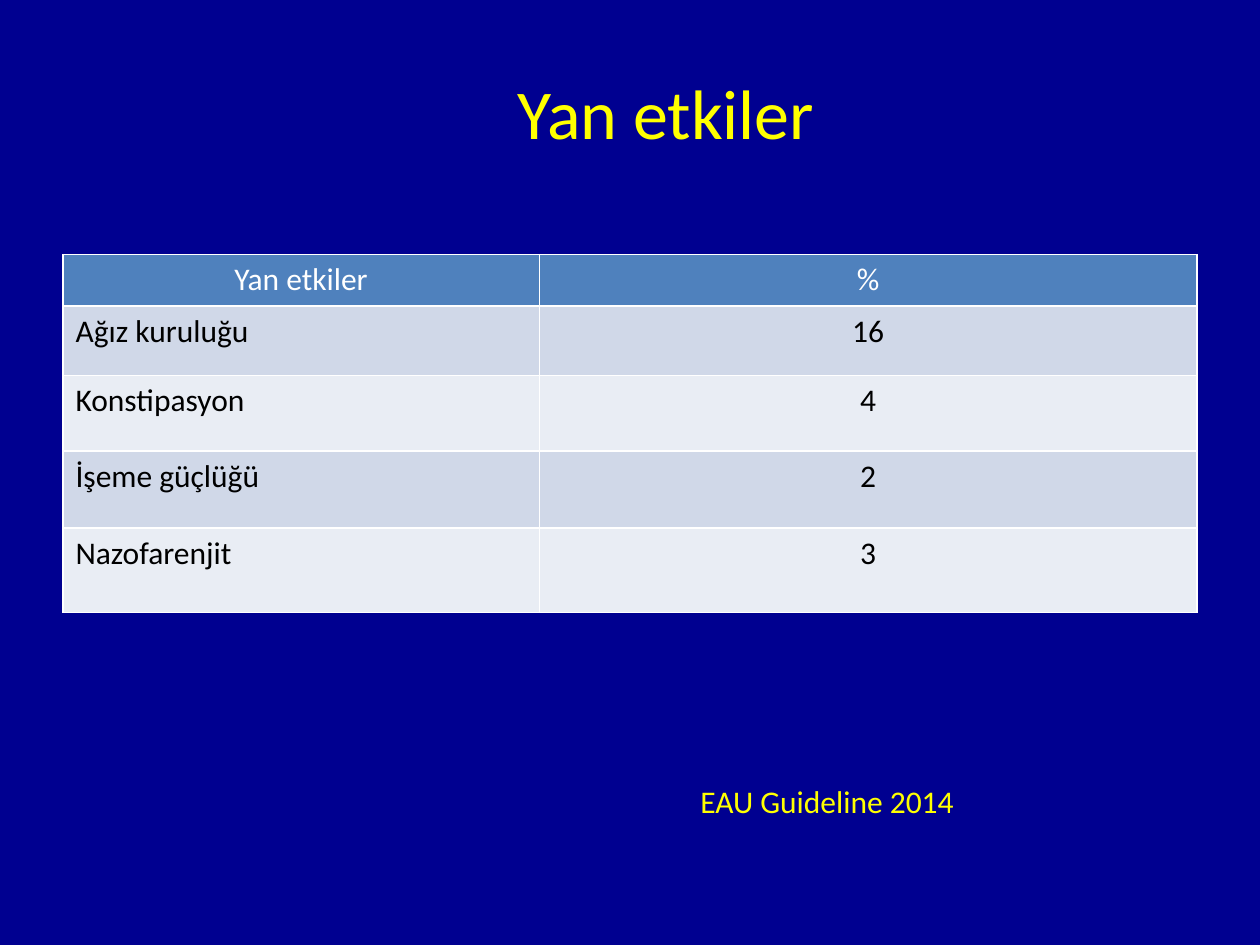
from lxml.etree import SubElement
from pptx import Presentation
from pptx.dml.color import RGBColor
from pptx.enum.text import MSO_ANCHOR, PP_ALIGN
from pptx.oxml.ns import qn
from pptx.util import Inches, Pt

TITLE = "Yan etkiler"
SOURCE = "EAU Guideline 2014"
ROWS = [
    ("Yan etkiler", "%"),
    ("Ağız kuruluğu", "16"),
    ("Konstipasyon", "4"),
    ("İşeme güçlüğü", "2"),
    ("Nazofarenjit", "3"),
]
COLUMN_WIDTHS = [3.78, 5.22]
ROW_HEIGHTS = [0.41, 0.55, 0.6, 0.61, 0.67]
NAVY, YELLOW, WHITE, BLACK = "000090", "FFFF00", "FFFFFF", "000000"
HEADER_FILL = "4F81BD"
BAND_FILLS = ["E9EDF4", "D0D8E8"]


def paint(fill, color):
    fill.solid()
    fill.fore_color.rgb = RGBColor.from_string(color)


def write(frame, text, size, color, align):
    para = frame.paragraphs[0]
    para.alignment = align
    span = para.add_run()
    span.text = text
    span.font.name = "Calibri"
    span.font.size = Pt(size)
    paint(span.font.fill, color)


def add_borders(cell, color):
    properties = cell._tc.get_or_add_tcPr()
    for index, side in enumerate(("lnL", "lnR", "lnT", "lnB")):
        line = properties.makeelement(qn(f"a:{side}"), {"w": str(Pt(1))})
        fill = SubElement(line, qn("a:solidFill"))
        SubElement(fill, qn("a:srgbClr"), val=color)
        properties.insert(index, line)


def add_effects_table(page):
    table = page.shapes.add_table(
        len(ROWS), len(COLUMN_WIDTHS), Inches(0.5), Inches(2.02),
        Inches(sum(COLUMN_WIDTHS)), Inches(sum(ROW_HEIGHTS)),
    ).table
    for column, width in zip(table.columns, COLUMN_WIDTHS):
        column.width = Inches(width)
    for row, height in zip(table.rows, ROW_HEIGHTS):
        row.height = Inches(height)
    for r, values in enumerate(ROWS):
        for c, value in enumerate(values):
            cell = table.cell(r, c)
            centred = r == 0 or c == 1
            paint(cell.fill, BAND_FILLS[r % 2] if r else HEADER_FILL)
            add_borders(cell, WHITE)
            write(cell.text_frame, value, 18, BLACK if r else WHITE,
                  PP_ALIGN.CENTER if centred else PP_ALIGN.LEFT)


def main():
    deck = Presentation()
    deck.slide_width, deck.slide_height = Inches(10), Inches(7.5)
    page = deck.slides.add_slide(deck.slide_layouts[5])
    paint(page.background.fill, NAVY)

    title = page.shapes.title
    title.left, title.top = Inches(4.01), Inches(0.5)
    title.width, title.height = Inches(2.62), Inches(0.77)
    title.text_frame.word_wrap = False
    title.text_frame.vertical_anchor = MSO_ANCHOR.TOP
    write(title.text_frame, TITLE, 40, YELLOW, PP_ALIGN.LEFT)

    add_effects_table(page)

    box = page.shapes.add_textbox(Inches(3.13), Inches(5.73), Inches(6.87), Inches(1.25))
    box.text_frame.word_wrap = True
    box.text_frame.vertical_anchor = MSO_ANCHOR.MIDDLE
    write(box.text_frame, SOURCE, 18, YELLOW, PP_ALIGN.CENTER)

    deck.save("out.pptx")


if __name__ == "__main__":
    main()
